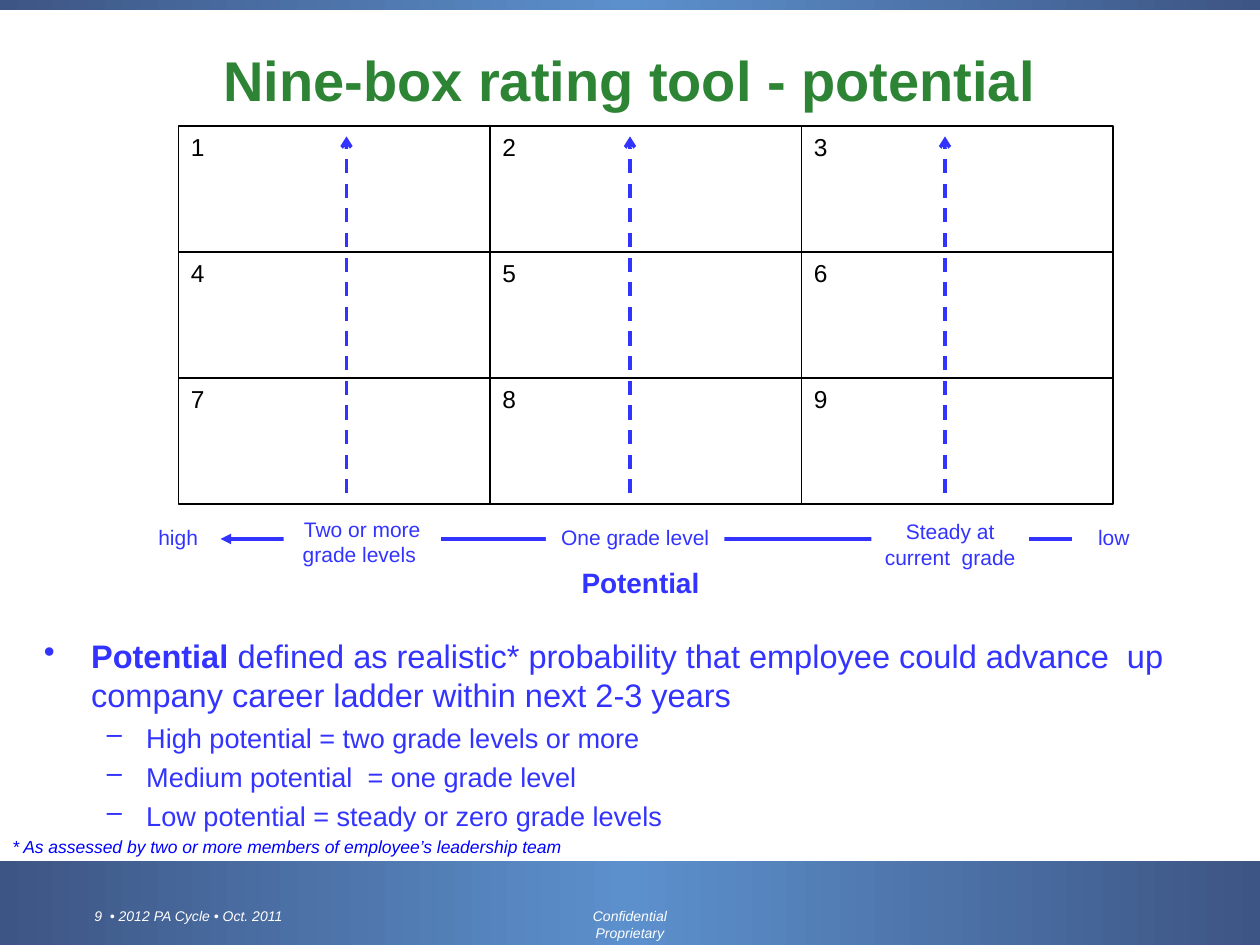
from copy import deepcopy

from lxml.etree import SubElement
from pptx import Presentation
from pptx.dml.color import RGBColor
from pptx.enum.dml import MSO_LINE
from pptx.enum.shapes import MSO_CONNECTOR, MSO_SHAPE
from pptx.enum.text import MSO_ANCHOR, PP_ALIGN
from pptx.oxml.ns import qn
from pptx.util import Pt

BLUE, GREEN, BLACK, WHITE = "3333FF", "2D8435", "000000", "FFFFFF"
BAND_EDGE, BAND_MIDDLE, NOTE_BLUE = "3D5584", "5C90CC", "0000FF"


def color(hex_code):
    return RGBColor.from_string(hex_code)


def style(para, size, hex_code, bold=False, italic=False):
    font = para.font
    font.name, font.size = "Arial", Pt(size)
    font.bold, font.italic = bold, italic
    font.color.rgb = color(hex_code)


def write(shape, text, size, hex_code, align=PP_ALIGN.LEFT,
          anchor=MSO_ANCHOR.TOP, wrap=True, **emphasis):
    frame = shape.text_frame
    frame.word_wrap, frame.vertical_anchor = wrap, anchor
    para = frame.paragraphs[0]
    para.text, para.alignment = text, align
    style(para, size, hex_code, **emphasis)


def add_text(page, box, text, size, hex_code, **options):
    write(page.shapes.add_textbox(*map(Pt, box)), text, size, hex_code, **options)


def add_box(page, box):
    shape = page.shapes.add_shape(MSO_SHAPE.RECTANGLE, *map(Pt, box))
    shape.shadow.inherit = False
    return shape


def add_arrow(page, start, end, head, dash=None):
    arrow = page.shapes.add_connector(MSO_CONNECTOR.STRAIGHT, *map(Pt, start + end))
    arrow.line.color.rgb, arrow.line.width = color(BLUE), Pt(2)
    if dash:
        arrow.line.dash_style = dash
    properties = arrow._element.spPr
    SubElement(properties.find(qn("a:ln")), qn("a:tailEnd"), type=head)
    SubElement(properties, qn("a:effectLst"))


def add_band(page, box):
    """Bar that is lightest in the middle."""
    band = add_box(page, box)
    band.line.fill.background()
    band.fill.gradient()
    band.fill.gradient_angle = 0
    stops = band._element.spPr.find(".//" + qn("a:gsLst"))
    stops.append(deepcopy(stops[0]))
    shades = (BAND_EDGE, BAND_MIDDLE, BAND_EDGE)
    for stop, position, shade in zip(band.fill.gradient_stops, (0, 0.5, 1), shades):
        stop.position = position
        stop.color.rgb = color(shade)


def add_grid(page, box):
    """Nine numbered cells with a rising arrow in each column."""
    left, top, width, height = box
    cell_width, cell_height = width / 3, height / 3
    for index in range(9):
        row, column = divmod(index, 3)
        cell = add_box(page, (left + column * cell_width, top + row * cell_height,
                              cell_width, cell_height))
        cell.fill.background()
        cell.line.color.rgb, cell.line.width = color(BLACK), Pt(1)
        write(cell, str(index + 1), 14, BLACK)
    for x in (198, 360, 540):
        add_arrow(page, (x, top + height - 6), (x, top + 6), "arrow", MSO_LINE.DASH)


def add_scale(page, box):
    """Axis from low to high, its labels covering parts of the line."""
    left, top, width, height = box
    middle = top + height / 2
    add_arrow(page, (left + width, middle), (left, middle), "triangle")
    labels = [  # text, left, top, width, height
        ("high", 77.8, 296, 48, 21.6),
        ("Two or more\vgrade levels ", 162, 291.6, 90, 36),
        ("One grade level", 312, 296, 102, 21.6),
        ("Steady at\vcurrent  grade ", 498, 293, 90, 36),
        ("low", 612.7, 296, 47.5, 21.6),
    ]
    for text, *place in labels:
        label = add_box(page, place)
        if text == "high":
            label.fill.background()
        else:
            label.fill.solid()
            label.fill.fore_color.rgb = color(WHITE)
        label.line.fill.background()
        write(label, text, 12, BLUE, align=PP_ALIGN.CENTER, anchor=MSO_ANCHOR.MIDDLE)
    add_text(page, (186, 319.7, 360, 26.6), "Potential", 16, BLUE,
             align=PP_ALIGN.CENTER, bold=True)


def add_bullet(para, mark, margin, hang):
    properties = para._p.get_or_add_pPr()
    properties.set("marL", str(Pt(margin)))
    properties.set("indent", str(-Pt(hang)))
    SubElement(properties, qn("a:buChar"), char=mark)


def add_definition(page, box):
    """Meaning of potential and its three levels."""
    frame = page.shapes.add_textbox(*map(Pt, box)).text_frame
    frame.word_wrap = True
    para = frame.paragraphs[0]
    add_bullet(para, "•", 27, 27)
    style(para, 18.6, BLUE)
    term = para.add_run()
    term.text, term.font.bold = "Potential ", True
    para.add_run().text = ("defined as realistic* probability that employee could "
                           "advance  up company career ladder within next 2-3 years")
    for text in ("High potential = two grade levels or more",
                 "Medium potential  = one grade level",
                 "Low potential = steady or zero grade levels"):
        para = frame.add_paragraph()
        para.text, para.level, para.space_before = text, 1, Pt(3.8)
        add_bullet(para, "–", 58.5, 22.5)
        style(para, 15.5, BLUE)


def add_footer(page, box):
    left, top, width, height = box
    add_band(page, box)
    add_text(page, (left + 46.8, top + 23, 191.5, 16.6),
             "9  • 2012 PA Cycle • Oct. 2011", 8, WHITE, italic=True)
    add_text(page, (left + 311, top + 23, 98, 16.6), "Confidential\vProprietary",
             8, WHITE, align=PP_ALIGN.CENTER, italic=True)


def main():
    deck = Presentation()
    deck.slide_width, deck.slide_height = Pt(720), Pt(540)
    page = deck.slides.add_slide(deck.slide_layouts[6])

    add_footer(page, (0, 492, 720, 48))
    add_band(page, (0, 0, 720, 5.8))
    add_text(page, (5.8, 18, 708, 54), "Nine-box rating tool - potential", 32, GREEN,
             align=PP_ALIGN.CENTER, anchor=MSO_ANCHOR.MIDDLE, bold=True)
    add_grid(page, (102, 72, 534, 216))
    add_scale(page, (126, 290, 504, 36))
    add_definition(page, (18, 360, 684, 102))
    add_text(page, (0, 474, 330, 19.4),
             "* As assessed by two or more members of employee’s leadership team",
             10, NOTE_BLUE, wrap=False, italic=True)

    deck.save("out.pptx")


if __name__ == "__main__":
    main()
